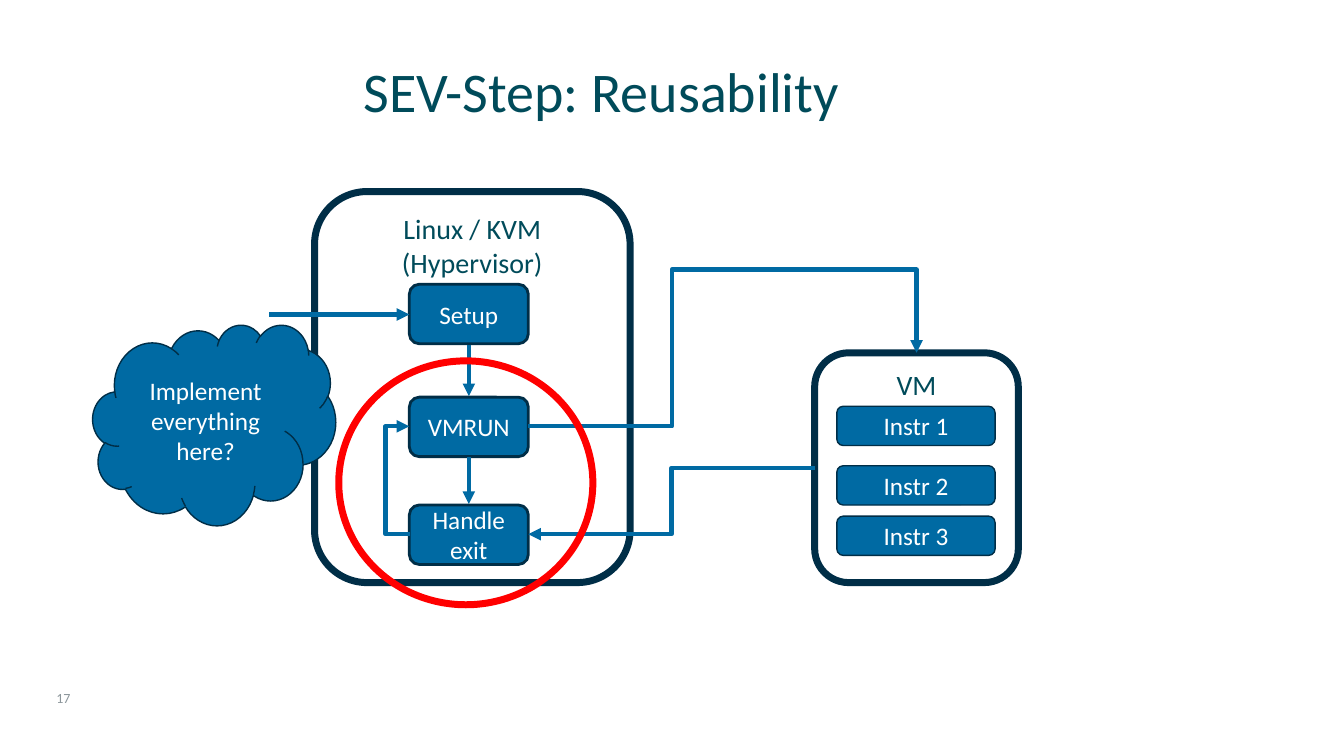
from lxml import etree
from pptx import Presentation
from pptx.dml.color import RGBColor
from pptx.enum.shapes import MSO_CONNECTOR, MSO_SHAPE
from pptx.enum.text import MSO_ANCHOR, PP_ALIGN
from pptx.oxml.ns import qn
from pptx.util import Inches, Pt

ROUND, OVAL, CLOUD = MSO_SHAPE.ROUNDED_RECTANGLE, MSO_SHAPE.OVAL, MSO_SHAPE.CLOUD
STRAIGHT, ELBOW = MSO_CONNECTOR.STRAIGHT, MSO_CONNECTOR.ELBOW
TOP, MIDDLE = MSO_ANCHOR.TOP, MSO_ANCHOR.MIDDLE
LEFT, CENTER = PP_ALIGN.LEFT, PP_ALIGN.CENTER
FONT = "Calibri"
NAVY, BLUE, TEAL = "002E47", "006AA3", "004B5A"
WHITE, RED, GRAY = "FFFFFF", "FF0000", "8C969B"


def color(hex_value):
    return RGBColor.from_string(hex_value)


def write(sp, text, size, ink, align=CENTER, anchor=MIDDLE):
    tf = sp.text_frame
    tf.word_wrap = True
    tf.vertical_anchor = anchor
    tf.text = text
    for p in tf.paragraphs:
        p.alignment = align
        for r in p.runs:
            r.font.name = FONT
            r.font.size = Pt(size)
            r.font.color.rgb = color(ink)
    return tf


def label(s, box, text, size, ink):
    sp = s.shapes.add_textbox(*map(Inches, box))
    return write(sp, text, size, ink, LEFT)


def outline(s, kind, box, line, width, fill=None):
    sp = s.shapes.add_shape(kind, *map(Inches, box))
    sp.shadow.inherit = False
    if fill:
        sp.fill.solid()
        sp.fill.fore_color.rgb = color(fill)
    else:
        sp.fill.background()
    sp.line.color.rgb = color(line)
    sp.line.width = Pt(width)
    return sp


def arrow(s, start, end, adjust=()):
    kind = ELBOW if adjust else STRAIGHT
    cx = s.shapes.add_connector(kind, *map(Inches, start + end))
    cx.line.color.rgb = color(BLUE)
    cx.line.width = Pt(3)
    etree.SubElement(cx.line._get_or_add_ln(), qn("a:tailEnd"), type="triangle")
    sp_pr = cx._element.spPr
    etree.SubElement(sp_pr, qn("a:effectLst"))
    if adjust:
        geom = sp_pr.find(qn("a:prstGeom"))
        geom.set("prst", f"bentConnector{len(adjust) + 2}")
        guides = geom.find(qn("a:avLst"))
        if guides is None:
            guides = etree.SubElement(geom, qn("a:avLst"))
        for i, share in enumerate(adjust, 1):
            etree.SubElement(guides, qn("a:gd"), name=f"adj{i}",
                             fmla=f"val {round(share * 100000)}")


def container(s, box, title):
    write(outline(s, ROUND, box, NAVY, 5), title, 20, TEAL, anchor=TOP)


def stack(s, box, steps, size, border):
    x, y = box[:2]
    w, h = size
    for dy, text in steps:
        write(outline(s, ROUND, (x, y + dy, w, h), NAVY, border, BLUE), text, 18, WHITE)


def hypervisor(s, box):
    x, y, w, h = box
    container(s, box, "Linux / KVM\n(Hypervisor)")
    stack(s, (x + 0.94, y), [(0.92, "Setup"), (2.04, "VMRUN"), (3.11, "Handle exit")],
          (1.18, 0.59), 2)


def guest(s, box):
    x, y, w, h = box
    container(s, box, "VM")
    stack(s, (x + 0.22, y), [(0.53, "Instr 1"), (1.12, "Instr 2"), (1.62, "Instr 3")],
          (1.57, 0.39), 1)


def control_flow(s, host, vm):
    left = host[0] + 0.94
    right, mid = left + 1.18, left + 0.59
    setup, run, leave = (host[1] + dy for dy in (1.22, 2.33, 3.4))
    half = 0.3
    arrow(s, (mid, setup + half), (mid, run - half))
    arrow(s, (right, run), (vm[0] + vm[2] / 2, vm[1]), (0.37, 2.13))
    arrow(s, (vm[0], vm[1] + vm[3] / 2), (right, leave), (0.5,))
    arrow(s, (mid, run + half), (mid, leave - half))
    arrow(s, (left + 0.01, leave), (left, run), (25,))
    arrow(s, (left - 1.39, setup), (left, setup))


def question(s, box):
    x, y, w, h = box
    outline(s, OVAL, (x + 2.44, y + 0.36, 2.52, 2.42), RED, 5)
    cloud = outline(s, CLOUD, box, NAVY, 1, BLUE)
    write(cloud, "Implement everything here?", 18, WHITE)


def main():
    prs = Presentation()
    prs.slide_width, prs.slide_height = Inches(13.33), Inches(7.5)
    s = prs.slides.add_slide(prs.slide_layouts[6])
    host, vm = (3.12, 1.9, 3.13, 3.88), (8.08, 3.5, 2.02, 2.28)
    label(s, (0.46, 6.8, 0.49, 0.25), "17", 10, GRAY)
    title = label(s, (3.51, 0.45, 8.89, 0.98), "SEV-Step: Reusability", 40, TEAL)
    title.paragraphs[0].line_spacing = 0.9
    hypervisor(s, host)
    guest(s, vm)
    control_flow(s, host, vm)
    question(s, (0.92, 3.22, 2.41, 1.99))
    prs.save("out.pptx")


if __name__ == "__main__":
    main()
